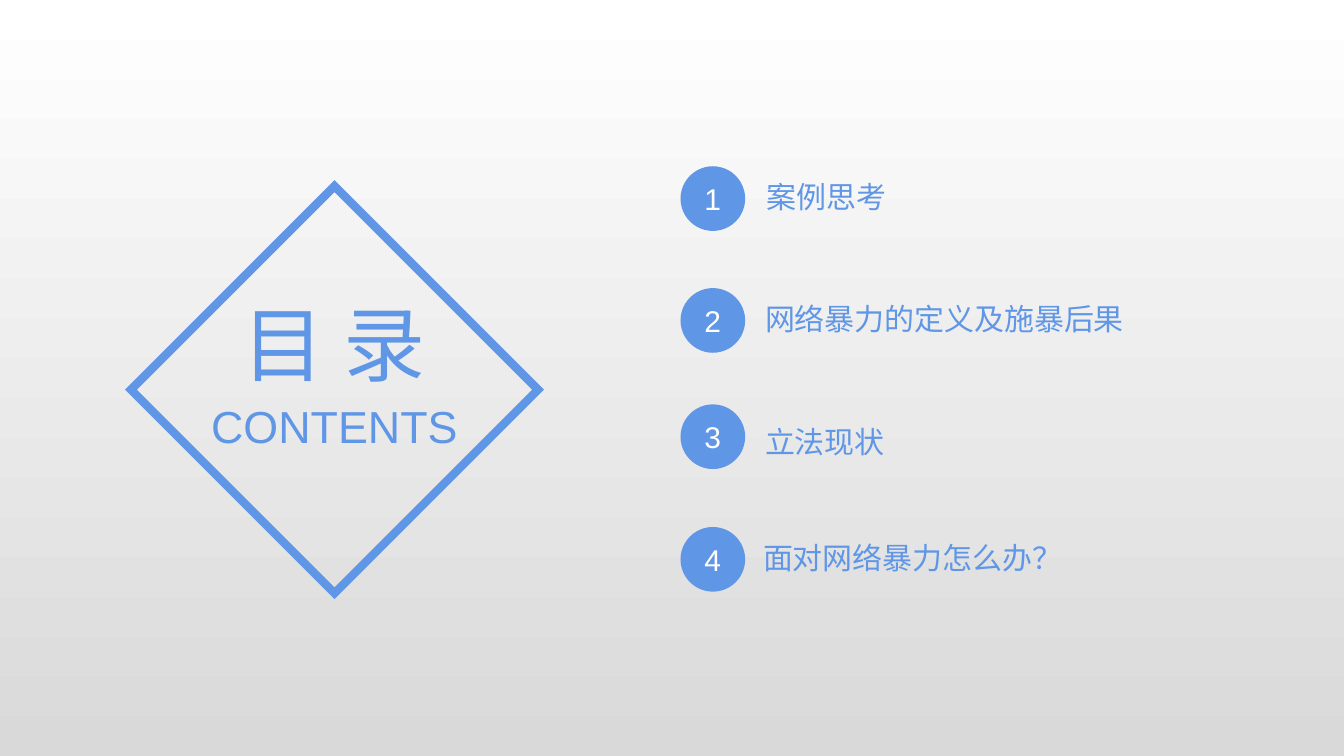
from dataclasses import dataclass

from lxml import etree
from pptx import Presentation
from pptx.dml.color import RGBColor
from pptx.enum.shapes import MSO_SHAPE
from pptx.enum.text import MSO_ANCHOR, MSO_AUTO_SIZE, PP_ALIGN
from pptx.oxml.ns import qn
from pptx.util import Cm, Pt

DIAMOND, CIRCLE = MSO_SHAPE.DIAMOND, MSO_SHAPE.OVAL
LEFT, CENTER = PP_ALIGN.LEFT, PP_ALIGN.CENTER
TOP, MIDDLE = MSO_ANCHOR.TOP, MSO_ANCHOR.MIDDLE
GROW = MSO_AUTO_SIZE.SHAPE_TO_FIT_TEXT


@dataclass(frozen=True)
class Theme:
    blue: RGBColor = RGBColor(0x60, 0x96, 0xE6)
    white: RGBColor = RGBColor(0xFF, 0xFF, 0xFF)
    grey: RGBColor = RGBColor(0xD9, 0xD9, 0xD9)
    latin: str = "Arial"
    chinese: str = "Noto Sans CJK SC"
    title_size: float = 58.6
    subtitle_size: float = 32
    item_size: float = 21.4
    outline: float = 6


@dataclass(frozen=True)
class Chapter:
    """One contents entry; lengths in centimetres."""
    title: str
    circle_top: float
    left: float
    top: float
    width: float
    wrap: bool = False


THEME = Theme()
CIRCLE_LEFT, CIRCLE_SIZE, ITEM_HEIGHT = 17.15, 1.63, 1.17
CHAPTERS = (
    Chapter("案例思考", 4.19, 19.08, 4.37, 3.56),
    Chapter("网络暴力的定义及施暴后果", 7.26, 19.03, 7.46, 9.58),
    Chapter("立法现状", 10.19, 19.03, 10.54, 11.28, wrap=True),
    Chapter("面对网络暴力怎么办？", 13.28, 18.98, 13.46, 8.05),
)


def write(shape, text: str, font: str, size: float, color: RGBColor,
          align=CENTER, anchor=TOP, wrap: bool = False) -> None:
    frame = shape.text_frame
    frame.text = text
    frame.word_wrap = wrap
    frame.vertical_anchor = anchor
    paragraph = frame.paragraphs[0]
    paragraph.alignment = align
    paragraph.line_spacing = 1.0
    paragraph.font.name = font
    paragraph.font.size = Pt(size)
    paragraph.font.color.rgb = color
    # East Asian glyphs take their typeface from a:ea, which follows a:latin.
    latin = paragraph.font._element.find(qn("a:latin"))
    east_asian = etree.Element(qn("a:ea"), typeface=font)
    latin.addnext(east_asian)


def paint_background(slide) -> None:
    fill = slide.background.fill
    fill.gradient()
    fill.gradient_angle = 270
    for stop, color in zip(fill.gradient_stops, (THEME.white, THEME.grey)):
        stop.color.rgb = color


def add_heading(slide) -> None:
    heading = slide.shapes.title
    heading.left, heading.top = Cm(5.79), Cm(7.26)
    heading.width, heading.height = Cm(5.26), Cm(2.77)
    write(heading, "目 录", THEME.chinese, THEME.title_size, THEME.blue)
    heading.text_frame.auto_size = GROW

    diamond = slide.shapes.add_shape(DIAMOND, Cm(3.3), Cm(4.69), Cm(10.26), Cm(10.26))
    diamond.shadow.inherit = False
    diamond.fill.background()
    diamond.line.color.rgb = THEME.blue
    diamond.line.width = Pt(THEME.outline)
    etree.SubElement(diamond.line._ln, qn("a:miter"), lim="800000")

    subtitle = slide.shapes.add_textbox(Cm(4.83), Cm(9.91), Cm(7.2), Cm(1.63))
    write(subtitle, "CONTENTS", THEME.latin, THEME.subtitle_size, THEME.blue)
    subtitle.text_frame.auto_size = GROW


def add_chapter(slide, number: int, chapter: Chapter) -> None:
    circle = slide.shapes.add_shape(CIRCLE, Cm(CIRCLE_LEFT), Cm(chapter.circle_top),
                                    Cm(CIRCLE_SIZE), Cm(CIRCLE_SIZE))
    circle.shadow.inherit = False
    circle.fill.solid()
    circle.fill.fore_color.rgb = THEME.blue
    circle.line.fill.background()
    write(circle, str(number), THEME.latin, THEME.item_size, THEME.white,
          anchor=MIDDLE, wrap=True)

    label = slide.shapes.add_textbox(Cm(chapter.left), Cm(chapter.top),
                                     Cm(chapter.width), Cm(ITEM_HEIGHT))
    write(label, chapter.title, THEME.chinese, THEME.item_size, THEME.blue,
          align=LEFT, wrap=chapter.wrap)
    label.text_frame.auto_size = GROW


def main() -> None:
    deck = Presentation()
    deck.slide_width, deck.slide_height = Cm(33.87), Cm(19.05)
    slide = deck.slides.add_slide(deck.slide_layouts[5])
    paint_background(slide)
    add_heading(slide)
    for number, chapter in enumerate(CHAPTERS, start=1):
        add_chapter(slide, number, chapter)
    deck.save("out.pptx")


if __name__ == "__main__":
    main()
